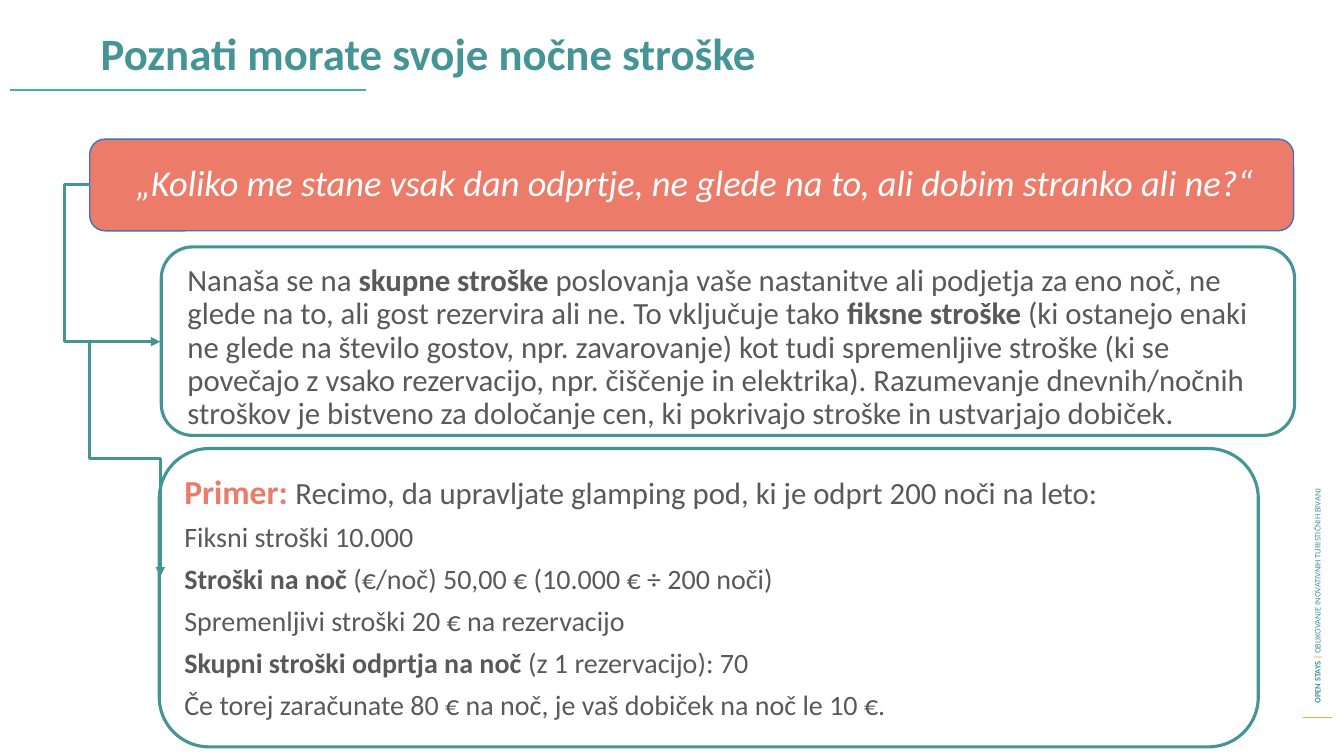
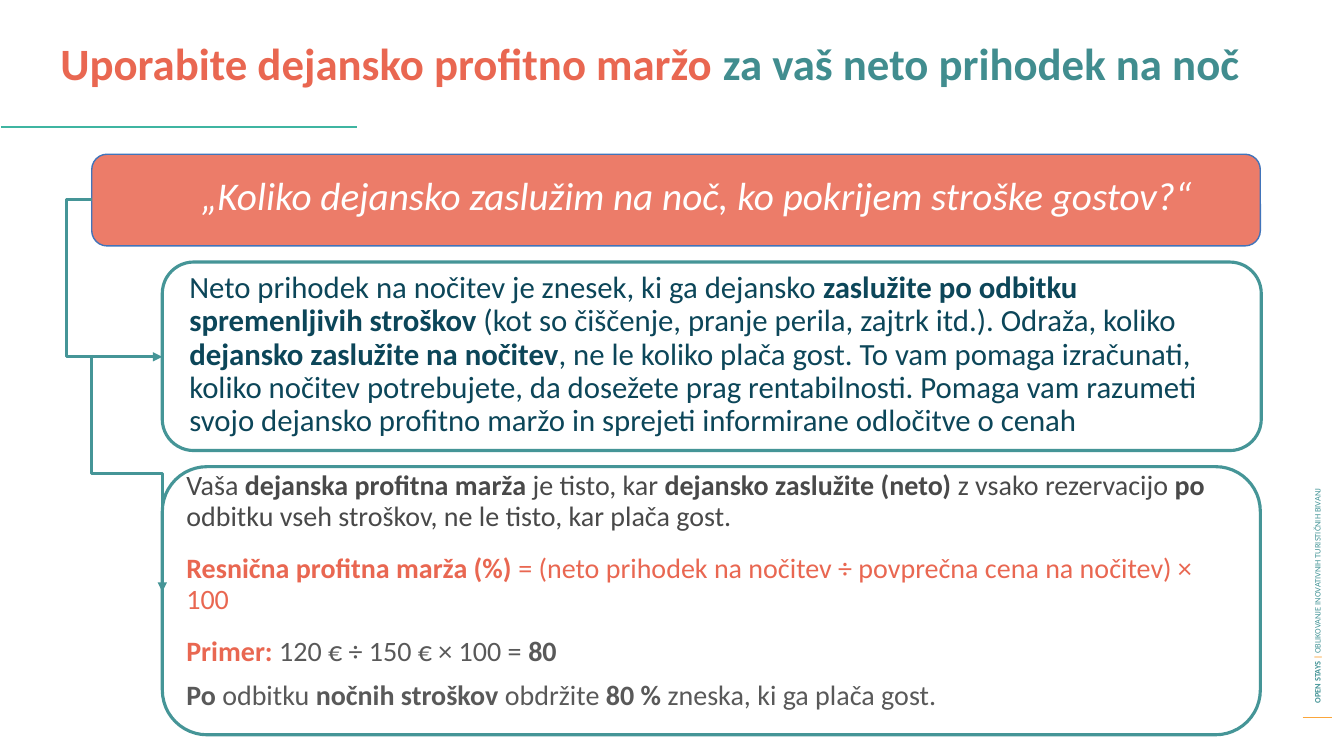
from lxml import etree
from pptx import Presentation
from pptx.dml.color import RGBColor
from pptx.enum import shapes as sh, text as tx
from pptx.oxml import ns
from pptx.util import Inches, Pt

TEAL = RGBColor(0x45, 0x95, 0x97)
DEEP = RGBColor(0x41, 0x8D, 0x8F)
MINT = RGBColor(0x3F, 0xB5, 0xA1)
CORAL = RGBColor(0xEC, 0x7C, 0x69)
RED = RGBColor(0xE9, 0x67, 0x51)
AMBER = RGBColor(0xFB, 0xA6, 0x3B)
BLUE = RGBColor(0x41, 0x74, 0xBA)
NAVY = RGBColor(0x0C, 0x46, 0x59)
GREY = RGBColor(0x59, 0x59, 0x59)
DARK = RGBColor(0x49, 0x49, 0x49)
WHITE = RGBColor(0xFF, 0xFF, 0xFF)
FONT = "Calibri"


def write(slide, box, paras, size, spacing=0.9, before=0, after=0,
          mid=False, center=False, italic=False):
    """Each paragraph lists (text, colour[, size]); asterisks toggle bold."""
    shape = slide.shapes.add_textbox(*map(Inches, box))
    frame = shape.text_frame
    frame.word_wrap = True
    if mid:
        frame.vertical_anchor = tx.MSO_ANCHOR.MIDDLE
    for i, parts in enumerate(paras):
        para = frame.add_paragraph() if i else frame.paragraphs[0]
        para.line_spacing = spacing
        para.space_before = Pt(before if i else 0)
        para.space_after = Pt(after[i] if isinstance(after, tuple) else after)
        para.alignment = tx.PP_ALIGN.CENTER if center else tx.PP_ALIGN.LEFT
        para.font.name, para.font.size = FONT, Pt(size)
        para.font.italic = italic
        for words, colour, *own in parts:
            for j, piece in enumerate(words.split("*")):
                if piece:
                    run = para.add_run()
                    run.text = piece
                    run.font.name = FONT
                    run.font.size = Pt(own[0] if own else size)
                    run.font.bold = j % 2 == 1
                    run.font.italic = italic
                    run.font.color.rgb = colour
    return shape


def line(slide, start, end, colour, width, kind=sh.MSO_CONNECTOR.STRAIGHT):
    link = slide.shapes.add_connector(kind, *map(Inches, (*start, *end)))
    link.line.color.rgb = colour
    link.line.width = Pt(width)
    etree.SubElement(link._element.spPr, ns.qn("a:effectLst"))
    return link


def arrow(slide, start, end, bend, turn=False):
    """Elbow arrow; a turned one leaves and arrives vertically."""
    (x1, y1), (x2, y2) = start, end
    if turn:
        cx, cy = (x1 + x2) / 2, (y1 + y2) / 2
        dx, dy = (x2 - x1) / 2, (y2 - y1) / 2
        start, end = (cx + dy, cy - dx), (cx - dy, cy + dx)
    link = line(slide, start, end, TEAL, 2.25, sh.MSO_CONNECTOR.ELBOW)
    props = link._element.spPr
    if turn:
        props.find(ns.qn("a:xfrm")).set("rot", str(270 * 60000))
    guides = props.find(ns.qn("a:prstGeom")).get_or_add_avLst()
    etree.SubElement(guides, ns.qn("a:gd"), name="adj1",
                     fmla=f"val {round(bend * 100000)}")
    etree.SubElement(props.find(ns.qn("a:ln")), ns.qn("a:tailEnd"),
                     type="triangle")


def card(slide, box, edge, width, fill=None):
    shape = slide.shapes.add_shape(sh.MSO_SHAPE.FLOWCHART_ALTERNATE_PROCESS,
                                   *map(Inches, box))
    shape.shadow.inherit = False
    if fill is None:
        shape.fill.background()
    else:
        shape.fill.solid()
        shape.fill.fore_color.rgb = fill
    shape.line.color.rgb = edge
    shape.line.width = Pt(width)


def side(slide):
    line(slide, (12.92, 7.12), (13.21, 7.12), AMBER, 0.75)
    label = write(slide, (10.18, 4.09, 5.77, 0.2), [[
        ("*OPEN STAYS *", TEAL), ("*| *", AMBER),
        ("OBLIKOVANJE INOVATIVNIH TURISTIČNIH BIVANJ", TEAL)]],
        6, spacing=1, mid=True)
    label.rotation = 270


def title(slide, box, parts, rule):
    write(slide, box, [parts], 32)
    x, y = rule
    line(slide, rule, (x + 3.53, y), MINT, 1.5)


def quote(slide, box, words, size, inset, mid=False):
    x, y, w, h = box
    card(slide, box, BLUE, 1, CORAL)
    dx, dy = inset
    write(slide, (x + dx, y + dy, 11.61, 0.76), [[(words, WHITE)]], size,
          mid=mid, center=True, italic=True)


def panel(slide, box, inset, width, paras, size, **style):
    x, y, w, h = box
    dx, dy = inset
    write(slide, (x + dx, y + dy, width, 0.88), paras, size, **style)
    card(slide, box, TEAL, 2.25)


def links(slide, x, y):
    """Arrows from the quote to the first panel and on to the second."""
    arrow(slide, (x, y), (x + 0.7, y + 1.56), -0.356)
    arrow(slide, (x, y + 1.54), (x + 0.7, y + 3.89), 0.5, turn=True)


def costs(slide):
    side(slide)
    title(slide, (0.9, 0.27, 11.61, 0.88),
          [("*Poznati morate svoje nočne stroške*", TEAL)], (0.1, 0.89))
    quote(slide, (0.89, 1.38, 11.94, 0.91),
          "„Koliko me stane vsak dan odprtje, ne glede na to, "
          "ali dobim stranko ali ne?“", 26, (0.2, 0.07), mid=True)
    panel(slide, (1.6, 2.45, 11.24, 1.87), (0.16, 0.13), 10.85, [[(
        "Nanaša se na *skupne stroške *poslovanja vaše nastanitve ali "
        "podjetja za eno noč, ne glede na to, ali gost rezervira ali ne. "
        "To vključuje tako *fiksne stroške *(ki ostanejo enaki ne glede na "
        "število gostov, npr. zavarovanje) kot tudi spremenljive stroške "
        "(ki se povečajo z vsako rezervacijo, npr. čiščenje in elektrika). "
        "Razumevanje dnevnih/nočnih stroškov je bistveno za določanje cen, "
        "ki pokrivajo stroške in ustvarjajo dobiček.", GREY)]], 22)
    facts = [
        "Fiksni stroški 10.000",
        "*Stroški na noč *(€/noč) 50,00 € (10.000 € ÷ 200 noči)",
        "Spremenljivi stroški 20 € na rezervacijo",
        "*Skupni stroški odprtja na noč *(z 1 rezervacijo): 70",
        "Če torej zaračunate 80 € na noč, je vaš dobiček na noč le 10 €.",
    ]
    lead = [("*Primer: *", CORAL, 24),
            ("Recimo, da upravljate glamping pod, ki je odprt 200 noči "
             "na leto:", GREY, 22)]
    panel(slide, (1.58, 4.45, 10.9, 2.96), (0.15, 0.17), 10.63,
          [lead] + [[(fact, GREY)] for fact in facts], 20,
          spacing=1, after=6)
    links(slide, 0.89, 1.83)


def margin(slide):
    side(slide)
    title(slide, (0.5, 0.37, 12.42, 0.94),
          [("*Uporabite dejansko profitno maržo *", RED),
           ("*za vaš neto prihodek na noč*", DEEP)], (0.01, 1.26))
    quote(slide, (0.91, 1.53, 11.59, 0.91),
          "„Koliko dejansko zaslužim na noč, ko pokrijem stroške gostov?“",
          28, (0.19, 0.17))
    panel(slide, (1.61, 2.6, 10.9, 1.87), (0.17, 0.05), 10.63, [[(
        "Neto prihodek na nočitev je znesek, ki ga dejansko *zaslužite po "
        "odbitku spremenljivih stroškov *(kot so čiščenje, pranje perila, "
        "zajtrk itd.). Odraža, koliko *dejansko zaslužite na nočitev*, ne "
        "le koliko plača gost. To vam pomaga izračunati, koliko nočitev "
        "potrebujete, da dosežete prag rentabilnosti. Pomaga vam razumeti "
        "svojo dejansko profitno maržo in sprejeti informirane odločitve "
        "o cenah", NAVY)]], 22)
    panel(slide, (1.61, 4.63, 10.89, 2.66), (0.14, 0), 10.63, [
        [("Vaša *dejanska profitna marža *je tisto, kar *dejansko zaslužite "
          "(neto) *z vsako rezervacijo *po *odbitku vseh stroškov, ne le "
          "tisto, kar plača gost.", DARK)],
        [("*Resnična profitna marža (%) *= (neto prihodek na nočitev ÷ "
          "povprečna cena na nočitev) × 100", RED)],
        [("*Primer:*", RED), (" 120 € ÷ 150 € × 100 =* 80*", GREY)],
        [("*Po *odbitku *nočnih stroškov *obdržite* 80 % *zneska, ki ga "
          "plača gost.", GREY)],
    ], 20, before=10, after=(6, 6, 0, 0))
    links(slide, 0.91, 1.98)


def main():
    deck = Presentation()
    deck.slide_width, deck.slide_height = Inches(13.33), Inches(7.5)
    for build in (costs, margin):
        build(deck.slides.add_slide(deck.slide_layouts[6]))
    deck.save("out.pptx")


if __name__ == "__main__":
    main()
